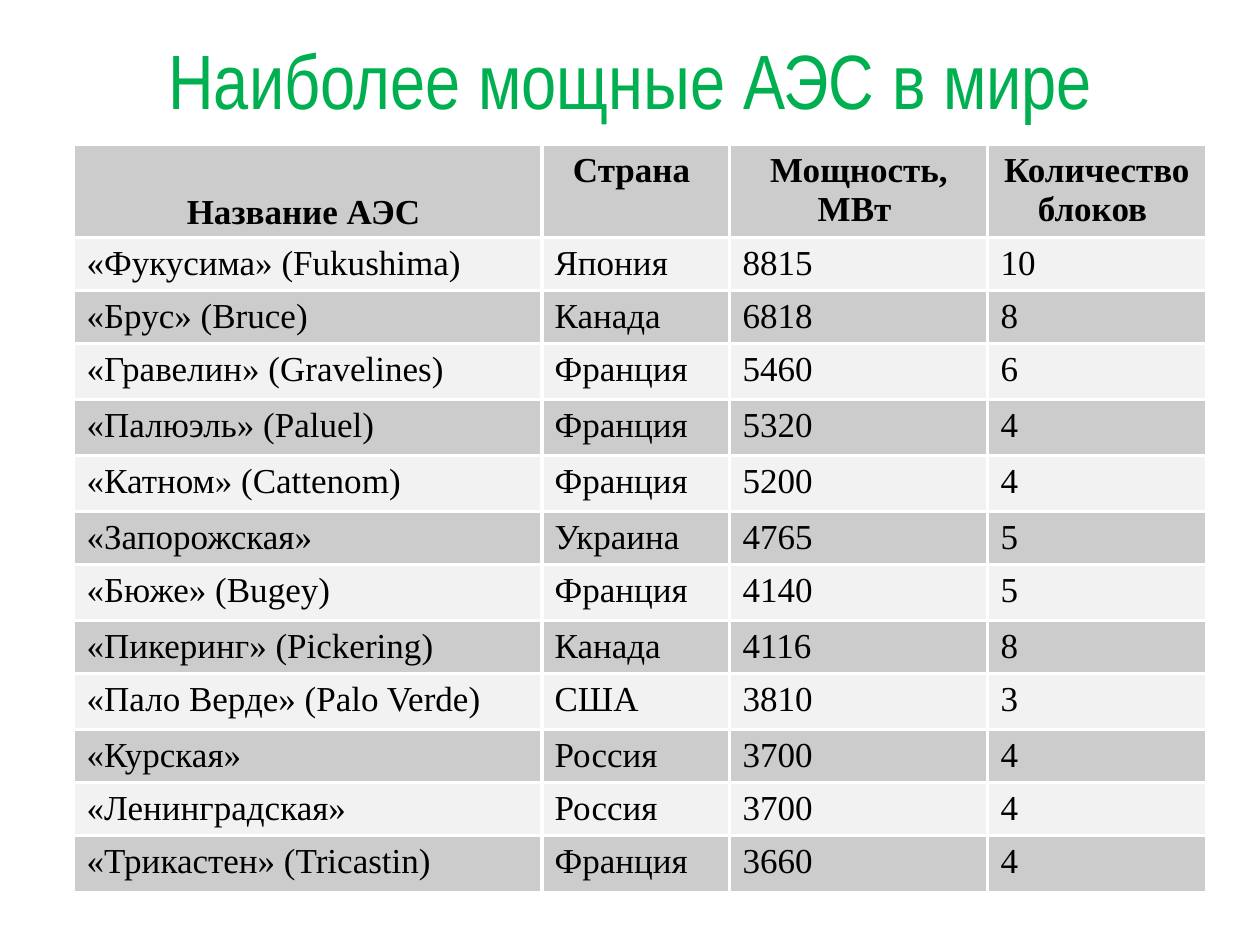
from lxml import etree
from pptx import Presentation
from pptx import util as u
from pptx.dml.color import RGBColor
from pptx.enum import text
from pptx.oxml.ns import qn

PX = 914400 // 126  # EMU per px

HEADERS = ["Название АЭС", "Страна", "Мощность, МВт", "Количество блоков"]
PLANTS = [
    ("«Фукусима» (Fukushima)", "Япония", 8815, 10),
    ("«Брус» (Bruce)", "Канада", 6818, 8),
    ("«Гравелин» (Gravelines)", "Франция", 5460, 6),
    ("«Палюэль» (Paluel)", "Франция", 5320, 4),
    ("«Катном» (Cattenom)", "Франция", 5200, 4),
    ("«Запорожская»", "Украина", 4765, 5),
    ("«Бюже» (Bugey)", "Франция", 4140, 5),
    ("«Пикеринг» (Pickering)", "Канада", 4116, 8),
    ("«Пало Верде» (Palo Verde)", "США", 3810, 3),
    ("«Курская»", "Россия", 3700, 4),
    ("«Ленинградская»", "Россия", 3700, 4),
    ("«Трикастен» (Tricastin)", "Франция", 3660, 4),
]
COL_WIDTHS = [468, 188, 258, 218]
ROW_HEIGHTS = [93, 53, 53, 56, 56, 56, 53, 56, 53, 56, 53, 53, 56]


def px(n):
    return u.Emu(n * PX)


def color(value):
    return RGBColor.from_string(value)


def format_text(tf, font, size, rgb, align, bold=False):
    for p in tf.paragraphs:
        p.alignment = align
        for r in p.runs:
            r.font.name = font
            r.font.size = u.Pt(size)
            r.font.bold = bold
            r.font.color.rgb = color(rgb)


def set_borders(cell, sides, rgb="FFFFFF", width=2):
    tcPr = cell._tc.get_or_add_tcPr()
    for side in sides:
        ln = etree.SubElement(tcPr, qn("a:ln" + side), w=str(u.Pt(width)))
        fill = etree.SubElement(ln, qn("a:solidFill"))
        etree.SubElement(fill, qn("a:srgbClr"), val=rgb)


def add_title(s, title):
    sp = s.shapes.title
    sp.left, sp.top, sp.width, sp.height = px(64), px(0), px(1134), px(158)
    tf = sp.text_frame
    tf.text = title
    tf.vertical_anchor = text.MSO_ANCHOR.MIDDLE
    format_text(tf, "Arial Narrow", 44, "00B050", text.PP_ALIGN.CENTER)


def add_plant_table(s, rows):
    n_rows, n_cols = len(rows), len(COL_WIDTHS)
    table = s.shapes.add_table(n_rows, n_cols, px(74), px(145),
                               px(sum(COL_WIDTHS)), px(sum(ROW_HEIGHTS))).table
    table.first_row = table.horz_banding = False
    for column, width in zip(table.columns, COL_WIDTHS):
        column.width = px(width)
    for row, height in zip(table.rows, ROW_HEIGHTS):
        row.height = px(height)

    for i, values in enumerate(rows):
        for j, value in enumerate(values):
            cell = table.cell(i, j)
            cell.text = f"{value} "
            header = i == 0
            align = text.PP_ALIGN.CENTER if header else text.PP_ALIGN.JUSTIFY
            format_text(cell.text_frame, "Times New Roman", 20, "000000", align, header)
            # White lines between cells only
            inner = {"L": j > 0, "R": j < n_cols - 1, "T": i > 0, "B": i < n_rows - 1}
            set_borders(cell, [side for side, shown in inner.items() if shown])
            cell.fill.solid()
            cell.fill.fore_color.rgb = color("F2F2F2" if i % 2 else "CCCCCC")
    table.cell(0, 0).vertical_anchor = text.MSO_ANCHOR.BOTTOM


def main():
    prs = Presentation()
    prs.slide_width, prs.slide_height = u.Inches(10), u.Inches(7.5)
    s = prs.slides.add_slide(prs.slide_layouts[5])
    add_title(s, "Наиболее мощные АЭС в мире")
    add_plant_table(s, [HEADERS, *PLANTS])
    prs.save("out.pptx")


if __name__ == "__main__":
    main()
